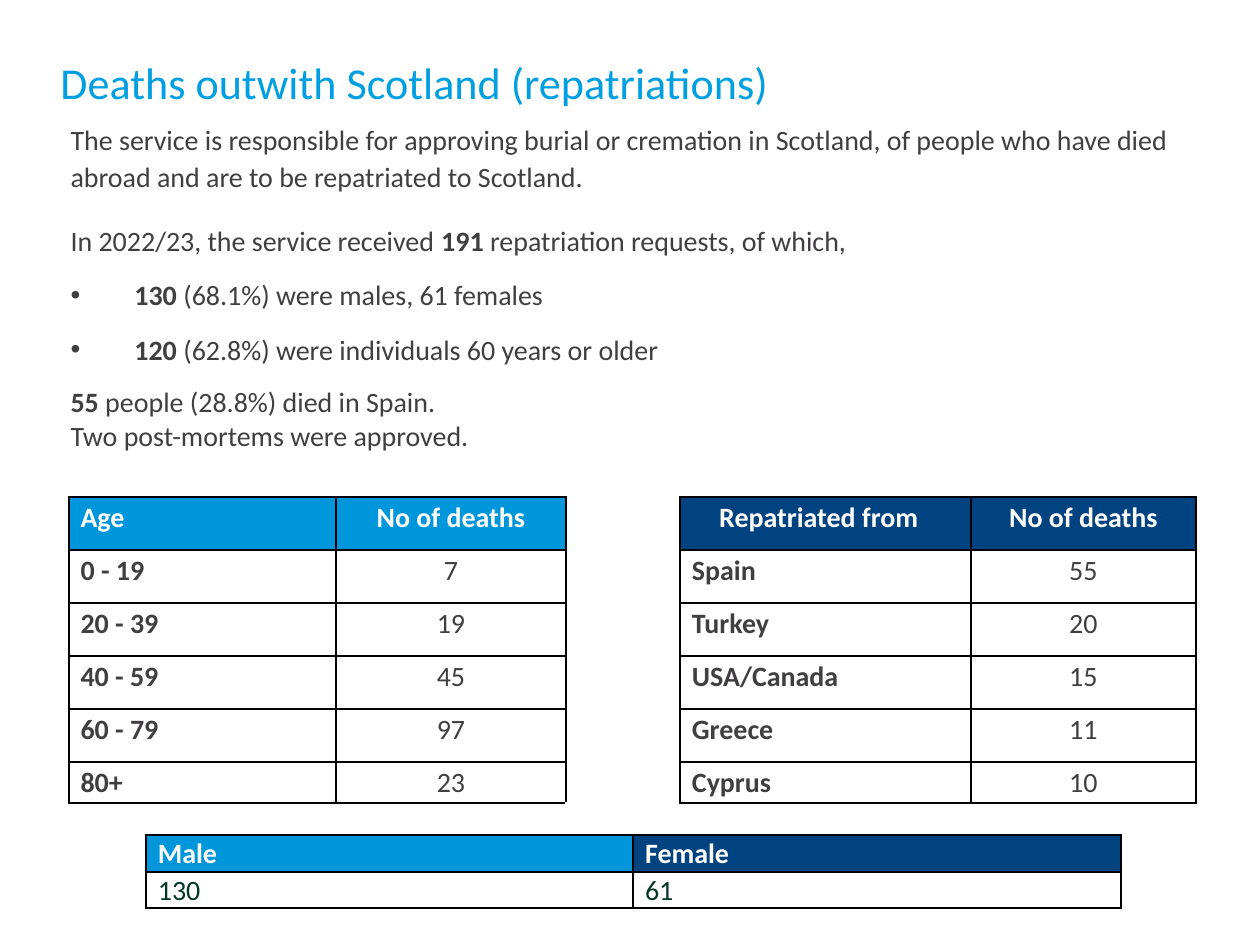
"""Build the slide on deaths outwith Scotland with its three tables."""
from dataclasses import dataclass

import lxml.etree
import pptx
import pptx.dml.color
import pptx.enum.text
import pptx.oxml.ns
import pptx.util

Inches = pptx.util.Inches
Pt = pptx.util.Pt
ALIGN = pptx.enum.text.PP_ALIGN
FONT = "Calibri"
GREY, WHITE, GREEN = "403E40", "FFFFFF", "003824"
TITLE_BLUE, LIGHT_BLUE, DARK_BLUE = "009FE2", "0096DC", "004380"


@dataclass(frozen=True)
class Span:
    text: str
    bold: bool = False


@dataclass(frozen=True)
class BodyLine:
    spans: tuple[Span, ...]
    line_spacing: float = 1.0
    space_after: float = 0
    bullet: bool = False


@dataclass(frozen=True)
class Column:
    header: str
    values: tuple[str, ...]
    width: float
    fill: str
    color: str = GREY
    bold: bool = False
    header_align: ALIGN = ALIGN.LEFT
    align: ALIGN = ALIGN.LEFT
    header_right_margin: float = 0.07


@dataclass(frozen=True)
class Spacer:
    width: float


BODY_LINES = (
    BodyLine((Span("The service is responsible for approving burial or cremation in Scotland, "
                   "of people who have died abroad and are to be repatriated to Scotland."),), 1.1, 12),
    BodyLine((Span("In 2022/23, the service received "), Span("191", True),
              Span(" repatriation requests, of which,")), 1.07, 8),
    BodyLine((Span("130", True), Span(" (68.1%) were males, 61 females")), 1.07, 8, True),
    BodyLine((Span("120", True), Span(" (62.8%) were individuals 60 years or older")), 1.07, 8, True),
    BodyLine((Span("55", True), Span(" people (28.8%) died in Spain."))),
    BodyLine((Span("Two post-mortems were approved."),)),
)
AGE_AND_COUNTRY = (
    Column("Age", ("0 - 19", "20 - 39", "40 - 59", "60 - 79", "80+"), 1.59, LIGHT_BLUE, bold=True),
    Column("No of deaths", ("7", "19", "45", "97", "23"), 1.37, LIGHT_BLUE,
           header_align=ALIGN.CENTER, align=ALIGN.CENTER),
    Spacer(0.68),
    Column("Repatriated from", ("Spain", "Turkey", "USA/Canada", "Greece", "Cyprus"), 1.73, DARK_BLUE,
           bold=True, header_align=ALIGN.CENTER, header_right_margin=0.15),
    Column("No of deaths", ("55", "20", "15", "11", "10"), 1.34, DARK_BLUE,
           header_align=ALIGN.CENTER, align=ALIGN.CENTER),
)
SEX = (
    Column("Male", ("130",), 2.9, LIGHT_BLUE, GREEN),
    Column("Female", ("61",), 2.9, DARK_BLUE, GREEN),
)


def rgb(value: str) -> pptx.dml.color.RGBColor:
    """Turn a hex string into a colour."""
    return pptx.dml.color.RGBColor.from_string(value)


def add_element(parent, tag: str, **attributes: str):
    """Append a drawing element to its parent."""
    return lxml.etree.SubElement(parent, pptx.oxml.ns.qn(tag), attributes)


def add_run(paragraph, text: str, size: float, color: str, bold: bool = False) -> None:
    """Add one formatted run."""
    run = paragraph.add_run()
    run.text = text
    run.font.name = FONT
    run.font.size = Pt(size)
    run.font.bold = bold
    run.font.color.rgb = rgb(color)


def place(shape, left: float, top: float, width: float, height: float) -> None:
    """Move and size a shape."""
    shape.left, shape.top = Inches(left), Inches(top)
    shape.width, shape.height = Inches(width), Inches(height)


def fill_title(shape) -> None:
    """Write the title."""
    place(shape, 0.3, 0.31, 6.88, 0.35)
    frame = shape.text_frame
    frame.auto_size = pptx.enum.text.MSO_AUTO_SIZE.NONE
    frame.vertical_anchor = pptx.enum.text.MSO_ANCHOR.MIDDLE
    frame.margin_left = Inches(0.06)
    frame.margin_top = frame.margin_right = frame.margin_bottom = 0
    frame.paragraphs[0].alignment = ALIGN.LEFT
    add_run(frame.paragraphs[0], "Deaths outwith Scotland (repatriations)", 18.9, TITLE_BLUE)


def fill_body(shape) -> None:
    """Write the body text with its bullets."""
    place(shape, 0.32, 0.66, 6.9, 2.1)
    frame = shape.text_frame
    frame.auto_size = pptx.enum.text.MSO_AUTO_SIZE.NONE
    frame.vertical_anchor = pptx.enum.text.MSO_ANCHOR.TOP
    for index, line in enumerate(BODY_LINES):
        paragraph = frame.add_paragraph() if index else frame.paragraphs[0]
        paragraph.line_spacing = line.line_spacing
        paragraph.space_before = Pt(0)
        paragraph.space_after = Pt(line.space_after)
        properties = paragraph._p.get_or_add_pPr()
        indent = Inches(0.38) if line.bullet else 0
        properties.set("marL", str(indent))
        properties.set("indent", str(-indent))
        if line.bullet:
            add_element(properties, "a:buFont", typeface="Arial")
            add_element(properties, "a:buChar", char="•")
        else:
            add_element(properties, "a:buNone")
        for span in line.spans:
            add_run(paragraph, span.text, 12, GREY, span.bold)


def add_borders(cell, sides: str) -> None:
    """Draw black one-point borders on the given sides."""
    properties = cell._tc.get_or_add_tcPr()
    for side in sides:
        line = add_element(properties, f"a:ln{side}", w=str(Pt(1)))
        add_element(add_element(line, "a:solidFill"), "a:srgbClr", val="000000")


def fill_spacer(cell) -> None:
    """Leave a cell of the gap column empty and clear."""
    cell.margin_top = cell.margin_bottom = 0
    add_borders(cell, "LR")
    cell.fill.background()
    add_element(cell.text_frame.paragraphs[0]._p, "a:endParaRPr", sz="1200")


def fill_cell(cell, column: Column, row: int, line_spacing: float) -> None:
    """Write a header or value cell."""
    header = row == 0
    cell.margin_left = Inches(0.07)
    cell.margin_right = Inches(column.header_right_margin if header else 0.07)
    cell.margin_top = cell.margin_bottom = 0
    add_borders(cell, "LRTB")
    if header:
        cell.fill.solid()
        cell.fill.fore_color.rgb = rgb(column.fill)
    else:
        cell.fill.background()
    paragraph = cell.text_frame.paragraphs[0]
    paragraph.alignment = column.header_align if header else column.align
    paragraph.line_spacing = line_spacing
    paragraph.space_after = Pt(8)
    text = column.header if header else column.values[row - 1]
    add_run(paragraph, text, 12, WHITE if header else column.color, header or column.bold)


def add_data_table(slide, left: float, top: float, columns: tuple[Column | Spacer, ...],
                   heights: tuple[float, ...], line_spacing: float) -> None:
    """Add a table described column by column."""
    width = sum(column.width for column in columns)
    table = slide.shapes.add_table(len(heights), len(columns), Inches(left), Inches(top),
                                   Inches(width), Inches(sum(heights))).table
    table.first_row = table.horz_banding = False
    for row, height in enumerate(heights):
        table.rows[row].height = Inches(height)
    for index, column in enumerate(columns):
        table.columns[index].width = Inches(column.width)
        for row in range(len(heights)):
            cell = table.cell(row, index)
            if isinstance(column, Spacer):
                fill_spacer(cell)
            else:
                fill_cell(cell, column, row, line_spacing)
        if isinstance(column, Spacer):
            table.cell(0, index).merge(table.cell(len(heights) - 1, index))


def main() -> None:
    """Build and save the presentation."""
    presentation = pptx.Presentation()
    presentation.slide_width = Inches(7.5)
    presentation.slide_height = presentation.slide_width * 3 // 4
    slide = presentation.slides.add_slide(presentation.slide_layouts[1])
    fill_title(slide.shapes.title)
    fill_body(slide.placeholders[1])
    add_data_table(slide, 0.41, 2.96, AGE_AND_COUNTRY, (1.58 / 5,) * 5 + (0.24,), 1.1)
    add_data_table(slide, 0.87, 4.97, SEX, (0.21,) * 2, 1.07)
    presentation.save("out.pptx")


if __name__ == "__main__":
    main()
